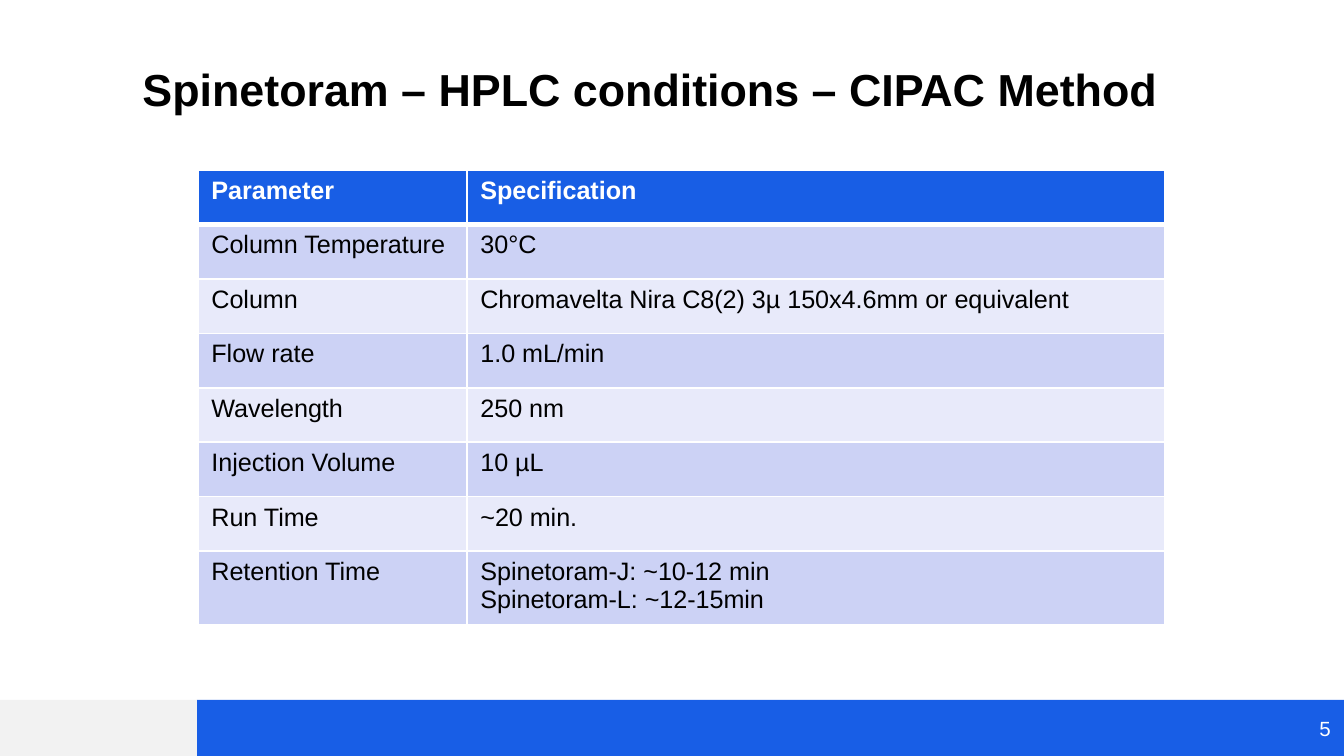
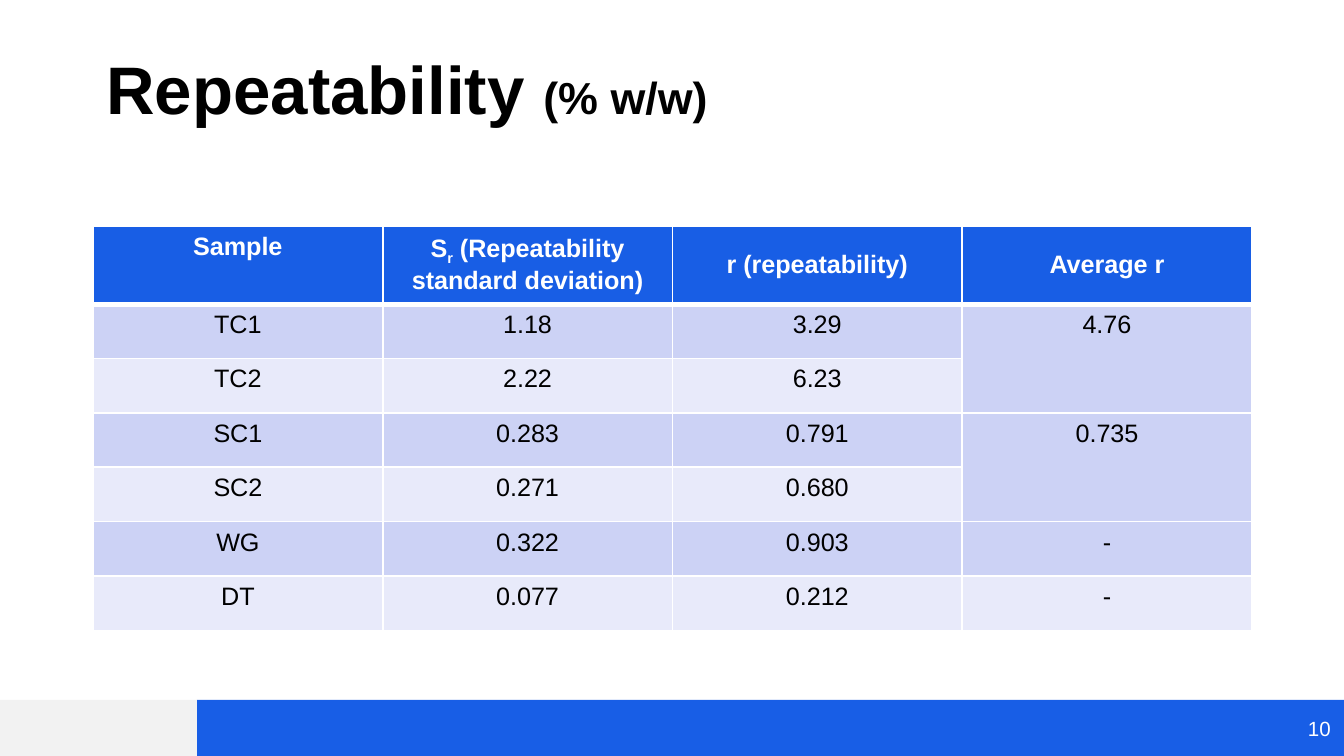
from lxml.etree import SubElement
from pptx import Presentation
from pptx.dml.color import RGBColor
from pptx.enum.shapes import MSO_SHAPE
from pptx.enum.text import MSO_ANCHOR, MSO_AUTO_SIZE, PP_ALIGN
from pptx.oxml.ns import qn
from pptx.util import Emu, Pt

EMU_PER_PX = 914400 / 134.4
SLIDE_SIZE = (1344, 756)
FONT = "Arial"
BLUE, GREY, WHITE, BLACK = "185EE6", "F2F2F2", "FFFFFF", "000000"
HEADER_FILL, ROW_FILLS = "185EE5", ("CCD2F5", "E8EAFA")

# Shared boxes: left, top, width, height
BLUE_BAND = (197, 700, 1147, 56)
GREY_BAND = (0, 700, 197, 56)
NUMBER_BOX = (1269, 700, 75, 56)

# Text formats
TITLE = {"size": 24, "bold": True, "color": BLACK}
BIG_TITLE = {**TITLE, "size": 36}
HEADER = {"size": 13.5, "bold": True, "color": WHITE}
BODY = {"size": 13.5, "bold": False, "color": BLACK}
NUMBER = {"size": 11, "bold": False, "color": WHITE}
SUBSCRIPT = "-25000"

CONDITIONS = [
    ["Parameter", "Specification"],
    ["Column Temperature", "30°C"],
    ["Column", "Chromavelta Nira C8(2) 3µ 150x4.6mm or equivalent"],
    ["Flow rate", "1.0 mL/min"],
    ["Wavelength", "250 nm"],
    ["Injection Volume", "10 µL"],
    ["Run Time", "~20 min."],
    ["Retention Time", "Spinetoram-J: ~10-12 min\nSpinetoram-L: ~12-15min"],
]

# None continues the cell above; a tuple holds text, subscript, text
REPEATABILITY = [
    ["Sample", ("S", "r", " (Repeatability standard deviation)"),
     "r (repeatability)", "Average r"],
    ["TC1", "1.18", "3.29", "4.76"],
    ["TC2", "2.22", "6.23", None],
    ["SC1", "0.283", "0.791", "0.735"],
    ["SC2", "0.271", "0.680", None],
    ["WG", "0.322", "0.903", "-"],
    ["DT", "0.077", "0.212", "-"],
]


def px(length):
    return Emu(round(length * EMU_PER_PX))


def rgb(color):
    return RGBColor.from_string(color)


def add_run(paragraph, text, text_format):
    run = paragraph.add_run()
    run.text = text
    values = {**text_format, "name": FONT, "size": Pt(text_format["size"])}
    run.font.color.rgb = rgb(values.pop("color"))
    for name, value in values.items():
        setattr(run.font, name, value)
    return run


def place(shape, box):
    for name, length in zip(("left", "top", "width", "height"), box):
        setattr(shape, name, px(length))


def set_up_layout(presentation):
    """Clear the footer placeholders and put the bands on the title-only layout."""
    layout = presentation.slide_layouts[5]
    for holder in list(layout.placeholders)[1:]:
        holder.element.getparent().remove(holder.element)
    return layout


def add_bands(slide):
    for box, color in ((BLUE_BAND, BLUE), (GREY_BAND, GREY)):
        band = slide.shapes.add_shape(MSO_SHAPE.RECTANGLE, *map(px, box))
        band.shadow.inherit = False
        band.fill.solid()
        band.fill.fore_color.rgb = rgb(color)
        band.line.fill.background()


def add_number(slide, number):
    box = slide.shapes.add_textbox(*map(px, NUMBER_BOX))
    frame = box.text_frame
    frame.word_wrap = True
    frame.vertical_anchor = MSO_ANCHOR.MIDDLE
    paragraph = frame.paragraphs[0]
    paragraph.alignment = PP_ALIGN.RIGHT
    add_run(paragraph, number, NUMBER)


def set_title(slide, box, runs):
    title = slide.shapes.title
    place(title, box)
    frame = title.text_frame
    frame.auto_size = MSO_AUTO_SIZE.NONE
    frame.vertical_anchor = MSO_ANCHOR.BOTTOM
    paragraph = frame.paragraphs[0]
    paragraph.alignment = PP_ALIGN.LEFT
    paragraph.line_spacing = 0.9
    for text, text_format in runs:
        add_run(paragraph, text, text_format)


def style_cell(cell, row):
    # Borders come before the fill; the rule under the header is thicker
    properties = cell._tc.get_or_add_tcPr()
    thick = {0: "lnB", 1: "lnT"}.get(row)
    for side in ("lnL", "lnR", "lnT", "lnB"):
        width = Pt(3 if side == thick else 1)
        line = SubElement(properties, qn(f"a:{side}"), w=str(width))
        fill = SubElement(line, qn("a:solidFill"))
        SubElement(fill, qn("a:srgbClr"), val=WHITE)
    cell.fill.solid()
    cell.fill.fore_color.rgb = rgb(ROW_FILLS[(row - 1) % 2] if row else HEADER_FILL)


def write_cell(cell, content, text_format, alignment):
    frame = cell.text_frame
    lines = [content] if isinstance(content, tuple) else [(t,) for t in content.split("\n")]
    for index, parts in enumerate(lines):
        paragraph = frame.add_paragraph() if index else frame.paragraphs[0]
        paragraph.alignment = alignment
        for position, text in enumerate(parts):
            run = add_run(paragraph, text, text_format)
            if position == 1:
                run.font._element.set("baseline", SUBSCRIPT)


def add_data_table(slide, box, widths, rows, alignment, middle_headers=()):
    shape = slide.shapes.add_table(len(rows), len(widths), *map(px, box))
    table = shape.table
    for column, width in zip(table.columns, widths):
        column.width = px(width)
    for table_row in table.rows:
        table_row.height = px(box[3] / len(rows))
    for row, contents in enumerate(rows):
        for column, content in enumerate(contents):
            cell = table.cell(row, column)
            style_cell(cell, row)
            if content is None:
                table.cell(row - 1, column).merge(cell)
                continue
            write_cell(cell, content, BODY if row else HEADER, alignment)
            if row == 0 and column in middle_headers:
                cell.vertical_anchor = MSO_ANCHOR.MIDDLE


def add_slide(presentation, layout, number):
    slide = presentation.slides.add_slide(layout)
    add_bands(slide)
    add_number(slide, number)
    return slide


def build_conditions(slide):
    set_title(slide, (129, 46, 1159, 77),
              [("Spinetoram – HPLC conditions – CIPAC Method", TITLE)])
    add_data_table(slide, (198, 170, 967, 436), (269, 698), CONDITIONS, PP_ALIGN.LEFT)


def build_repeatability(slide):
    set_title(slide, (93, 26, 1159, 110),
              [("Repeatability ", BIG_TITLE), ("(% w/w)", TITLE)])
    add_data_table(slide, (93, 226, 1159, 381), [1159 / 4] * 4, REPEATABILITY,
                   PP_ALIGN.CENTER, middle_headers=(1, 2, 3))


def main():
    presentation = Presentation()
    presentation.slide_width, presentation.slide_height = map(px, SLIDE_SIZE)
    layout = set_up_layout(presentation)
    build_conditions(add_slide(presentation, layout, "5"))
    build_repeatability(add_slide(presentation, layout, "10"))
    presentation.save("out.pptx")


if __name__ == "__main__":
    main()
